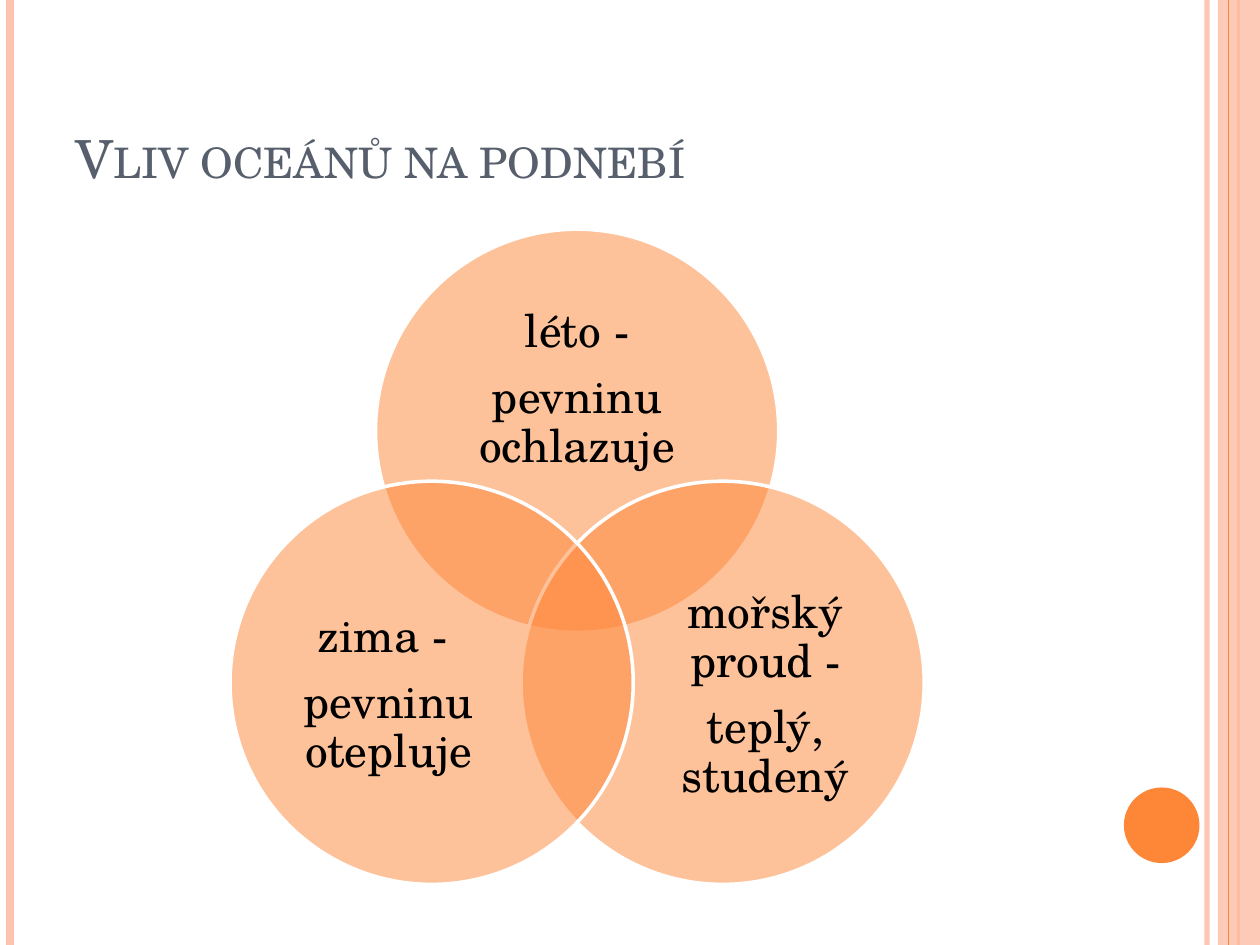
import math

from lxml import etree
from pptx import Presentation
from pptx import util as u
from pptx.dml import color
from pptx.enum import shapes, text
from pptx.oxml import ns

FONT = "TeX Gyre Schola"
ORANGE, PINK, WHITE = "FE8637", "FEC3AE", "FFFFFF"
WIDTH, HEIGHT = 720, 540

TITLE = "Vliv oceánů na podnebí"
BACK_STRIPES = [(689.76, PINK, 3, 93), (5.76, PINK, 4.5, 100), (707.76, ORANGE, 1.5, 100)]
FRONT_STRIPES = [(702, ORANGE, 0.75, 100)]

CENTER_X, CENTER_Y, ORBIT, RADIUS = 329.8, 342.2, 96, 115.2
CIRCLES = [
    {"angle": -90, "shift": (0, -23), "size": (169.2, 103.7), "lines": ["léto -", "pevninu ochlazuje"]},
    {"angle": 30, "shift": (24.5, 7.2), "size": (138.2, 126.7), "lines": ["mořský proud -", "teplý, studený"]},
    {"angle": 150, "shift": (-24.5, 7.2), "size": (138.2, 126.7), "lines": ["zima - ", "pevninu otepluje"]},
]


def rgb(value):
    return color.RGBColor.from_string(value)


def paint(fill, value, opacity=100):
    fill.solid()
    fill.fore_color.rgb = rgb(value)
    if opacity < 100:
        tint = fill._xPr.find(".//" + ns.qn("a:srgbClr"))
        etree.SubElement(tint, ns.qn("a:alpha"), val=str(opacity * 1000))


def add_stripe(slide, x, value, weight, opacity):
    stripe = slide.shapes.add_connector(
        shapes.MSO_CONNECTOR.STRAIGHT, u.Pt(x), 0, u.Pt(x), u.Pt(HEIGHT))
    stripe.line.width = u.Pt(weight)
    paint(stripe.line.fill, value, opacity)
    etree.SubElement(stripe._element.spPr, ns.qn("a:effectLst"))


def add_block(slide, kind, left, top, width, height, value, opacity=100, outline=None):
    block = slide.shapes.add_shape(kind, u.Pt(left), u.Pt(top), u.Pt(width), u.Pt(height))
    block.shadow.inherit = False
    paint(block.fill, value, opacity)
    if outline:
        block.line.width = u.Pt(2)
        paint(block.line.fill, outline)
    else:
        block.line.fill.background()


def write(frame, lines, size, value, align, anchor, margin=None, spacing=1, after=0, small_caps=False):
    frame.word_wrap = True
    frame.auto_size = text.MSO_AUTO_SIZE.NONE
    frame.vertical_anchor = anchor
    if margin is not None:
        frame.margin_left = frame.margin_right = u.Pt(margin)
        frame.margin_top = frame.margin_bottom = u.Pt(margin)
    for index, line in enumerate(lines):
        para = frame.add_paragraph() if index else frame.paragraphs[0]
        para.alignment = align
        para.line_spacing = spacing
        para.space_before = u.Pt(0)
        para.space_after = u.Pt(after)
        span = para.add_run()
        span.text = line
        span.font.name = FONT
        span.font.size = u.Pt(size)
        span.font.color.rgb = rgb(value)
        if small_caps:
            span.font._element.set("cap", "small")


def add_circle(slide, angle, shift, size, lines):
    x = CENTER_X + ORBIT * math.cos(math.radians(angle))
    y = CENTER_Y + ORBIT * math.sin(math.radians(angle))
    add_block(slide, shapes.MSO_SHAPE.OVAL, x - RADIUS, y - RADIUS,
              2 * RADIUS, 2 * RADIUS, ORANGE, 50, WHITE)
    width, height = size
    box = slide.shapes.add_textbox(
        u.Pt(x + shift[0] - width / 2), u.Pt(y + shift[1] - height / 2), u.Pt(width), u.Pt(height))
    write(box.text_frame, lines, 26, "000000", text.PP_ALIGN.CENTER,
          text.MSO_ANCHOR.MIDDLE, margin=0, spacing=0.9, after=9.5)


def main():
    deck = Presentation()
    deck.slide_width, deck.slide_height = u.Pt(WIDTH), u.Pt(HEIGHT)
    page = deck.slides.add_slide(deck.slide_layouts[5])
    paint(page.background.fill, WHITE)

    for stripe in BACK_STRIPES:
        add_stripe(page, *stripe)
    add_block(page, shapes.MSO_SHAPE.RECTANGLE, 696, 0, 24, HEIGHT, PINK, 87)
    for stripe in FRONT_STRIPES:
        add_stripe(page, *stripe)
    add_block(page, shapes.MSO_SHAPE.OVAL, 642.24, 450, 43.2, 43.2, ORANGE)

    title = page.shapes.title
    title.left, title.top, title.width, title.height = u.Pt(36), u.Pt(21.6), u.Pt(588.24), u.Pt(90)
    write(title.text_frame, [TITLE], 30, "575F6D", text.PP_ALIGN.LEFT,
          text.MSO_ANCHOR.BOTTOM, small_caps=True)

    for circle in CIRCLES:
        add_circle(page, **circle)
    deck.save("out.pptx")


if __name__ == "__main__":
    main()
